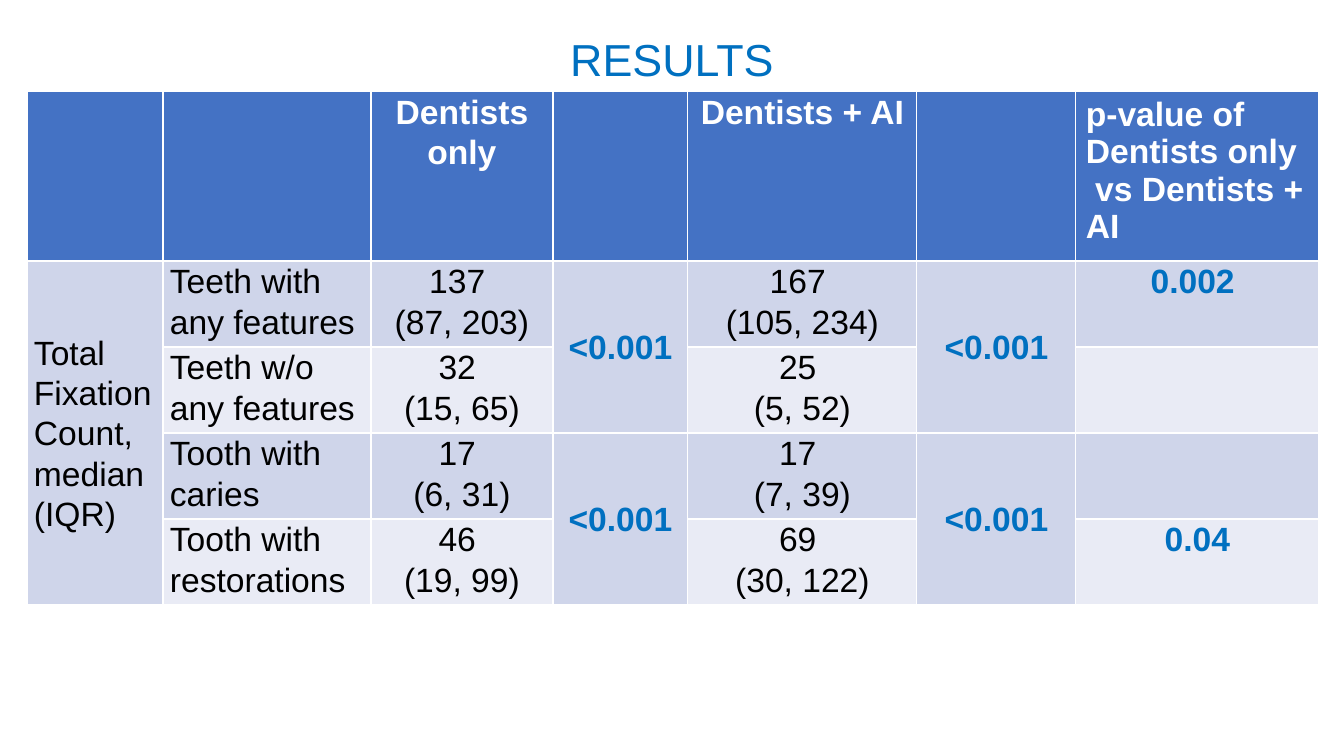
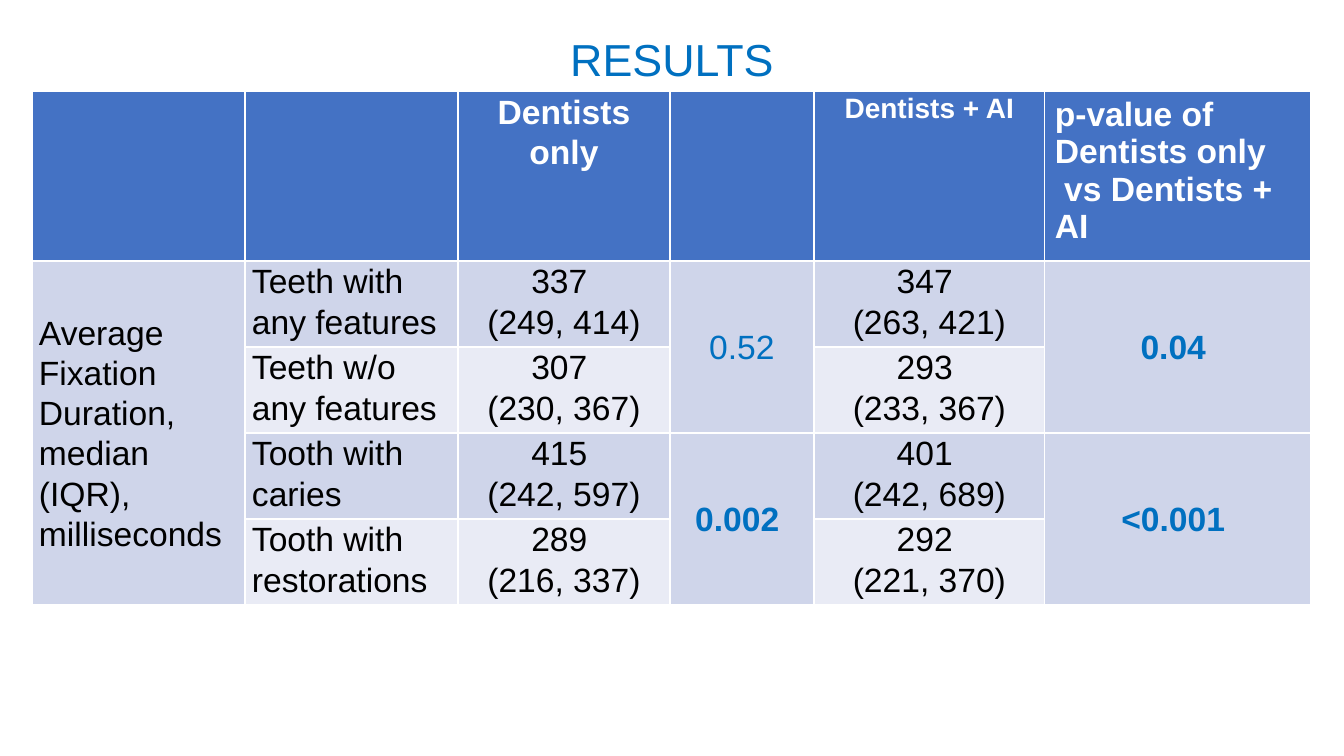
from dataclasses import dataclass

from lxml.etree import SubElement
from pptx import Presentation
from pptx.dml.color import RGBColor
from pptx.enum.text import MSO_ANCHOR, MSO_AUTO_SIZE, PP_ALIGN
from pptx.oxml.ns import qn
from pptx.util import Pt

SLIDE_WIDTH, SLIDE_HEIGHT = 1344, 756
EMU_PER_PX = 12192000 / SLIDE_WIDTH
FONT = "Arial"
WHITE, BLACK, BLUE = "FFFFFF", "000000", "0070C0"
HEADER_FILL = "4472C4"
BAND_FILLS = ("CFD5EA", "E9EBF5")
TITLE_BOX = (113, 26, 1118, 65)
TABLE_TOP, HEADER_HEIGHT, ROW_HEIGHT = 91, 170, 86
ROW_COUNT = 4
SIGNIFICANCE = 0.05
COMPARISON = "p-value of Dentists only\n vs Dentists + AI"
FEATURES = (
    "Teeth with any features",
    "Teeth w/o any features",
    "Tooth with caries",
    "Tooth with restorations",
)


@dataclass
class Column:
    width: int
    kind: str
    entries: tuple
    header: str = ""
    header_size: int = 24


COUNT_COLUMNS = (
    Column(136, "label", ("Total Fixation Count, median (IQR)",)),
    Column(208, "label", FEATURES),
    Column(182, "median", ("137 \n(87, 203)", "32 \n(15, 65)", "17 \n(6, 31)", "46 \n(19, 99)"),
           "Dentists only"),
    Column(135, "p-value", ("<0.001", "<0.001")),
    Column(229, "median", ("167 \n(105, 234)", "25 \n(5, 52)", "17 \n(7, 39)", "69 \n(30, 122)"),
           "Dentists + AI"),
    Column(159, "p-value", ("<0.001", "<0.001")),
    Column(243, "p-value", ("0.002 ", "", "", "0.04"), COMPARISON),
)
DURATION_COLUMNS = (
    Column(213, "label", ("Average Fixation Duration, median (IQR), milliseconds",)),
    Column(213, "label", FEATURES),
    Column(212, "median",
           ("337 \n(249, 414)", "307 \n(230, 367)", "415 \n(242, 597)", "289 \n(216, 337)"),
           "Dentists only"),
    Column(144, "p-value", ("0.52", "0.002 ")),
    Column(231, "median",
           ("347 \n(263, 421)", "293 \n(233, 367)", "401 \n(242, 689)", "292 \n(221, 370)"),
           "Dentists + AI", 20),
    Column(266, "p-value", ("0.04 ", "<0.001 "), COMPARISON),
)


def px(length):
    return round(length * EMU_PER_PX)


def color(value):
    return RGBColor.from_string(value)


def write_text(frame, text, size=24, fill=BLACK, bold=False, align=PP_ALIGN.LEFT, spacing=1.07):
    frame.word_wrap = True
    for index, line in enumerate(text.split("\n")):
        paragraph = frame.paragraphs[0] if index == 0 else frame.add_paragraph()
        paragraph.alignment = align
        paragraph.line_spacing = spacing
        run = paragraph.add_run()
        run.text = line
        run.font.name = FONT
        run.font.size = Pt(size)
        run.font.bold = bold
        run.font.color.rgb = color(fill)


def style_cell(cell, fill, inset_x=7, inset_y=0):
    cell.margin_left = cell.margin_right = px(inset_x)
    cell.margin_top = cell.margin_bottom = px(inset_y)
    cell.fill.solid()
    cell.fill.fore_color.rgb = color(fill)
    properties = cell._tc.get_or_add_tcPr()
    for position, side in enumerate(("lnL", "lnR", "lnT", "lnB")):
        border = SubElement(properties, qn(f"a:{side}"), w=str(Pt(1)))
        solid = SubElement(border, qn("a:solidFill"))
        SubElement(solid, qn("a:srgbClr"), val=WHITE)
        properties.insert(position, border)


def place_title(slide, box, text):
    title = slide.shapes.title
    title.left, title.top, title.width, title.height = map(px, box)
    title.text_frame.auto_size = MSO_AUTO_SIZE.NONE
    title.text_frame.vertical_anchor = MSO_ANCHOR.MIDDLE
    write_text(title.text_frame, text, size=32, fill=BLUE, align=PP_ALIGN.CENTER, spacing=1.0)


def fill_header(cell, column):
    if column.header == COMPARISON:
        style_cell(cell, HEADER_FILL, inset_x=10, inset_y=5)
        layout = {"align": PP_ALIGN.LEFT, "spacing": 1.0}
    else:
        style_cell(cell, HEADER_FILL)
        layout = {"align": PP_ALIGN.CENTER}
    if column.header:
        write_text(cell.text_frame, column.header, size=column.header_size,
                   fill=WHITE, bold=True, **layout)


def fill_entry(cell, kind, entry):
    if not entry:
        return
    if kind == "label":
        write_text(cell.text_frame, entry)
    elif kind == "median":
        write_text(cell.text_frame, entry, align=PP_ALIGN.CENTER)
    else:
        significant = float(entry.lstrip("<")) < SIGNIFICANCE
        write_text(cell.text_frame, entry, fill=BLUE, bold=significant, align=PP_ALIGN.CENTER)


def place_results(slide, left, top, columns):
    width = sum(column.width for column in columns)
    height = HEADER_HEIGHT + ROW_COUNT * ROW_HEIGHT
    frame = slide.shapes.add_table(ROW_COUNT + 1, len(columns), *map(px, (left, top, width, height)))
    results = frame.table
    results.horz_banding = False
    for index, row in enumerate(results.rows):
        row.height = px(ROW_HEIGHT if index else HEADER_HEIGHT)
    for position, column in enumerate(columns):
        results.columns[position].width = px(column.width)
        fill_header(results.cell(0, position), column)
        for row in range(ROW_COUNT):
            style_cell(results.cell(row + 1, position), BAND_FILLS[row % 2])
        span = ROW_COUNT // len(column.entries)
        for index, entry in enumerate(column.entries):
            first = 1 + index * span
            cell = results.cell(first, position)
            if span > 1:
                cell.merge(results.cell(first + span - 1, position))
                cell.vertical_anchor = MSO_ANCHOR.MIDDLE
            fill_entry(cell, column.kind, entry)


def add_results_slide(deck, left, columns):
    slide = deck.slides.add_slide(deck.slide_layouts[5])
    place_title(slide, TITLE_BOX, "RESULTS")
    place_results(slide, left, TABLE_TOP, columns)


def main():
    deck = Presentation()
    deck.slide_width, deck.slide_height = px(SLIDE_WIDTH), px(SLIDE_HEIGHT)
    add_results_slide(deck, 27, COUNT_COLUMNS)
    add_results_slide(deck, 32, DURATION_COLUMNS)
    deck.save("out.pptx")


if __name__ == "__main__":
    main()
